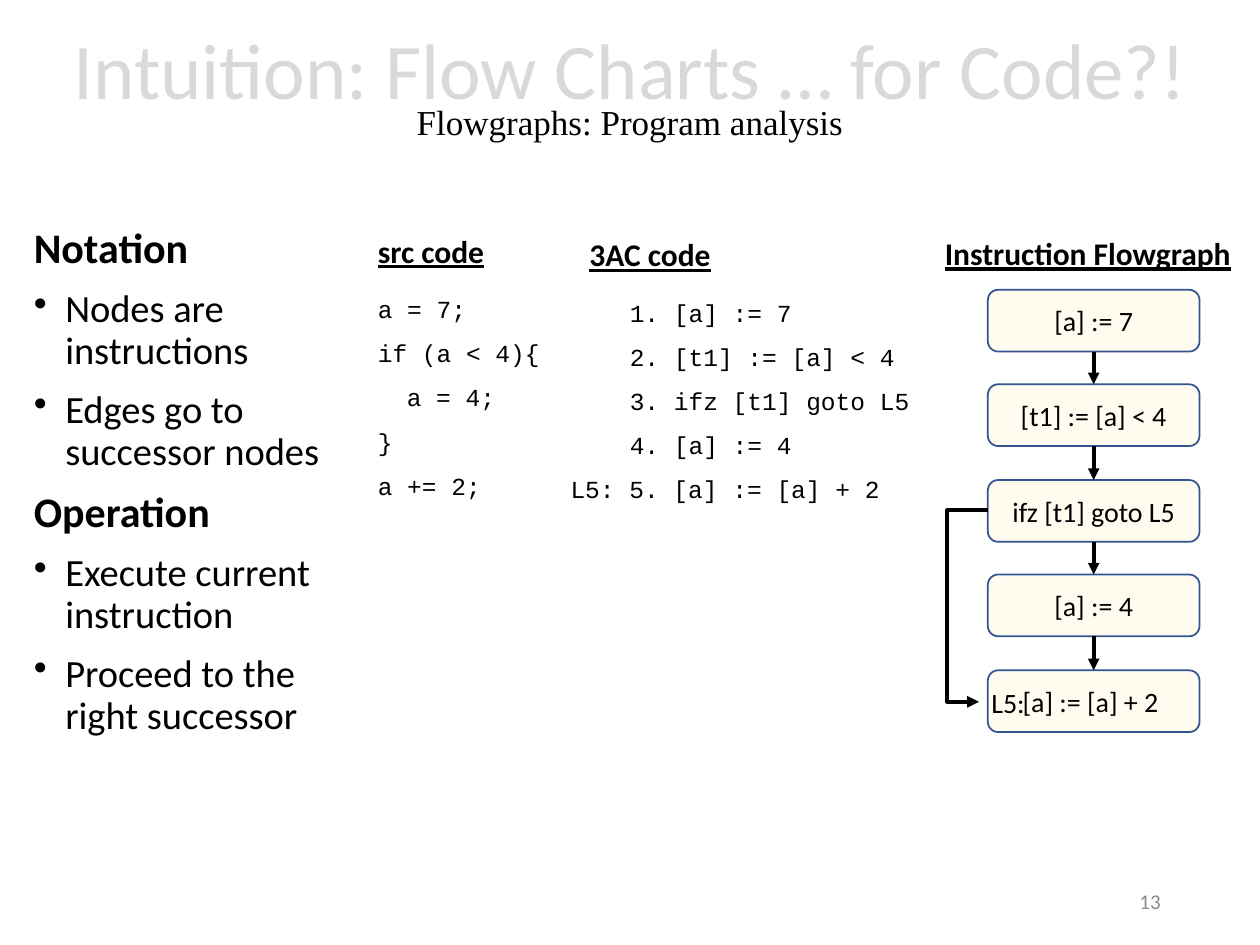
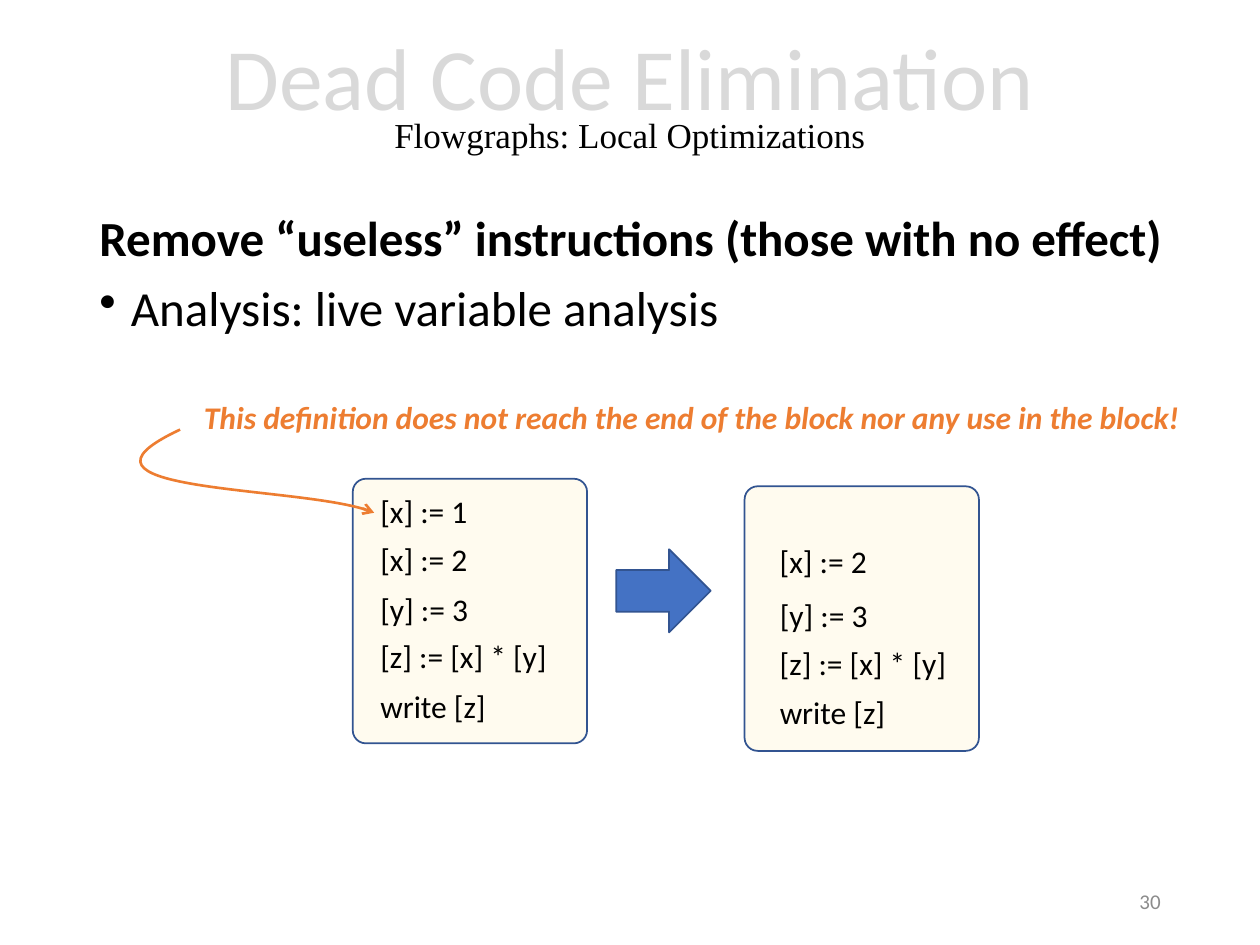
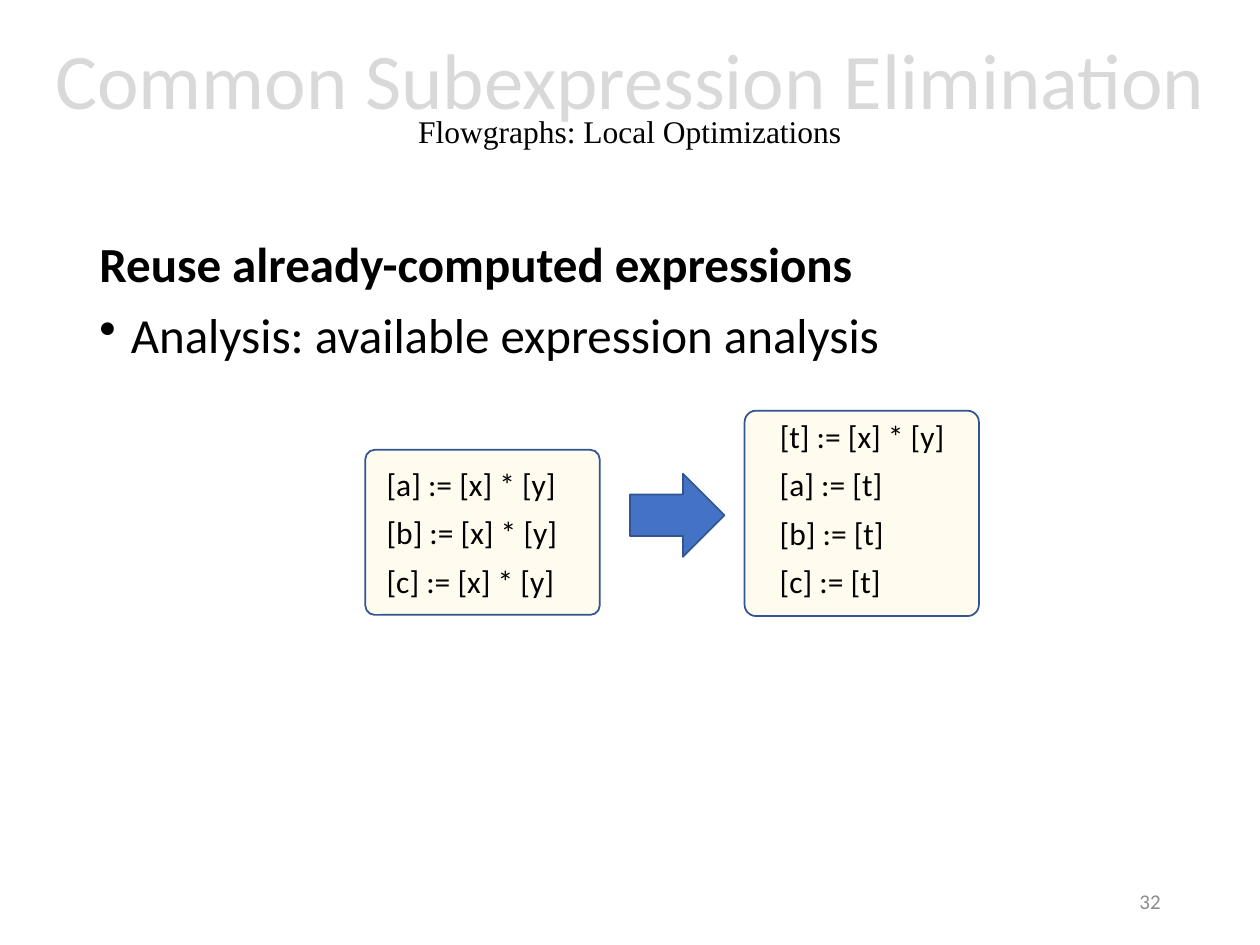
from dataclasses import dataclass, replace
from typing import NamedTuple, Sequence

from lxml.etree import SubElement
from pptx import Presentation
from pptx.dml.color import RGBColor
from pptx.enum.shapes import MSO_CONNECTOR, MSO_SHAPE
from pptx.enum.text import MSO_ANCHOR, MSO_AUTO_SIZE, PP_ALIGN
from pptx.oxml.ns import qn
from pptx.util import Pt

PX = 9144  # EMU per px, 100 px to the inch
SLIDE_WIDTH, SLIDE_HEIGHT = 1000, 750

BLACK = RGBColor(0x00, 0x00, 0x00)
TITLE_GRAY = RGBColor(0xD9, 0xD9, 0xD9)
NUMBER_GRAY = RGBColor(0x8C, 0x8C, 0x8C)
CREAM = RGBColor(0xFF, 0xF2, 0xCC)
BLUE = RGBColor(0x44, 0x72, 0xC4)
DARK_BLUE = RGBColor(0x32, 0x54, 0x91)
ORANGE = RGBColor(0xED, 0x7D, 0x31)

BLOCK_WIDTH = 186
BULLET_INDENT = 25
CODE_CHARACTER = 11.67  # px advance of one character of 14 pt Courier New


class Box(NamedTuple):
    left: int
    top: int
    width: int
    height: int

    def emu(self) -> list[int]:
        return [value * PX for value in self]


class Statement(NamedTuple):
    text: str
    width: int


class CodeLine(NamedTuple):
    text: str
    indent: int = 0  # in characters


class BodyLine(NamedTuple):
    text: str
    bullet: bool = True


@dataclass(frozen=True)
class TextStyle:
    size: int
    font: str = "Calibri"
    color: RGBColor = BLACK
    bold: bool = False
    italic: bool = False
    underline: bool = False


NODE_TEXT = TextStyle(16)
STATEMENT_TEXT = TextStyle(18)
HEADING_TEXT = TextStyle(18, bold=True, underline=True)
CODE_TEXT = TextStyle(14, font="Courier New")
CALLOUT_TEXT = TextStyle(18, color=ORANGE, bold=True, italic=True)
NUMBER_TEXT = TextStyle(12, color=NUMBER_GRAY)

ASSIGN_Y = Statement("[y] := 3", 91)
ASSIGN_Z = Statement("[z] := [x] * [y]", 154)
WRITE_Z = Statement("write [z]", 105)
ASSIGN_X = Statement("[x] := 2", 90)


def add_run(paragraph, text: str, style: TextStyle):
    run = paragraph.add_run()
    run.text = text
    font = run.font
    font.name, font.size = style.font, Pt(style.size)
    font.bold, font.italic, font.underline = style.bold, style.italic, style.underline
    font.color.rgb = style.color
    return run


def add_text_frame(slide, box: Box, wrap: bool = True, anchor=MSO_ANCHOR.TOP):
    frame = slide.shapes.add_textbox(*box.emu()).text_frame
    frame.word_wrap = wrap
    frame.vertical_anchor = anchor
    if not wrap:
        frame.auto_size = MSO_AUTO_SIZE.SHAPE_TO_FIT_TEXT
    return frame


def add_paragraphs(frame, count: int) -> list:
    return [frame.paragraphs[0]] + [frame.add_paragraph() for _ in range(count - 1)]


def set_indent(paragraph, margin: int, first_line: int = 0):
    properties = paragraph._p.get_or_add_pPr()
    properties.set("marL", str(margin * PX))
    properties.set("indent", str(first_line * PX))
    return properties


def add_label(slide, box: Box, text: str, style: TextStyle) -> None:
    frame = add_text_frame(slide, box, wrap=False)
    add_run(frame.paragraphs[0], text, style)


def add_title(slide, top: int, title: str, size: int, subtitle: str, subtitle_size: int) -> None:
    frame = add_text_frame(slide, Box(0, top, SLIDE_WIDTH, 145), anchor=MSO_ANCHOR.MIDDLE)
    paragraph = frame.paragraphs[0]
    paragraph.alignment = PP_ALIGN.CENTER
    paragraph.line_spacing = 0.7
    run = add_run(paragraph, title, TextStyle(size, color=TITLE_GRAY))
    outline = run.font._element.makeelement(qn("a:ln"), {"w": str(Pt(1))})
    fill = SubElement(outline, qn("a:solidFill"))
    SubElement(fill, qn("a:srgbClr"), val=str(BLACK))
    run.font._element.insert(0, outline)
    paragraph.add_line_break()
    add_run(paragraph, subtitle, TextStyle(subtitle_size, font="Times New Roman"))


def add_slide_number(slide, number: int) -> None:
    frame = add_text_frame(slide, Box(706, 695, 225, 40), anchor=MSO_ANCHOR.MIDDLE)
    paragraph = frame.paragraphs[0]
    paragraph.alignment = PP_ALIGN.RIGHT
    add_run(paragraph, str(number), NUMBER_TEXT)


def add_body(slide, box: Box, lines: Sequence[BodyLine], heading_size: int, bullet_size: int) -> None:
    frame = add_text_frame(slide, box)
    for paragraph, line in zip(add_paragraphs(frame, len(lines)), lines):
        paragraph.line_spacing = 0.9
        paragraph.space_before = Pt(10)
        if line.bullet:
            properties = set_indent(paragraph, BULLET_INDENT, -BULLET_INDENT)
            SubElement(properties, qn("a:buChar"), char="•")
        size = bullet_size if line.bullet else heading_size
        add_run(paragraph, line.text, TextStyle(size, bold=not line.bullet))


def add_code(slide, box: Box, lines: Sequence[CodeLine]) -> None:
    frame = add_text_frame(slide, box, wrap=False)
    for paragraph, line in zip(add_paragraphs(frame, len(lines)), lines):
        paragraph.line_spacing = 1.5
        if line.indent:
            set_indent(paragraph, round(line.indent * CODE_CHARACTER))
        add_run(paragraph, line.text, CODE_TEXT)


def add_filled_shape(slide, kind, box: Box, color: RGBColor):
    shape = slide.shapes.add_shape(kind, *box.emu())
    shape.shadow.inherit = False
    shape.fill.solid()
    shape.fill.fore_color.rgb = color
    shape.line.color.rgb = DARK_BLUE
    shape.line.width = Pt(1)
    return shape


def add_cream_box(slide, box: Box):
    shape = add_filled_shape(slide, MSO_SHAPE.ROUNDED_RECTANGLE, box, CREAM)
    color = shape._element.spPr.find(qn("a:solidFill")).find(qn("a:srgbClr"))
    SubElement(color, qn("a:alpha"), val="30000")
    return shape


def add_node(slide, box: Box, text: str):
    node = add_cream_box(slide, box)
    node.text_frame.vertical_anchor = MSO_ANCHOR.MIDDLE
    paragraph = node.text_frame.paragraphs[0]
    paragraph.alignment = PP_ALIGN.CENTER
    add_run(paragraph, text, NODE_TEXT)
    return node


def add_block(slide, left: int, top: int, height: int) -> None:
    block = add_cream_box(slide, Box(left, top, BLOCK_WIDTH, height))
    block.adjustments[0] = 0.056


def add_statements(slide, left: int, top: int, statements: Sequence[Statement]) -> None:
    for index, statement in enumerate(statements):
        box = Box(left, top + index * 77 // 2, statement.width, 40)
        add_label(slide, box, statement.text, STATEMENT_TEXT)


def add_transform_arrow(slide, left: int, top: int) -> None:
    add_filled_shape(slide, MSO_SHAPE.RIGHT_ARROW, Box(left, top, 75, 66), BLUE)


def set_arrow_line(shape, color: RGBColor, width: float, head: str) -> None:
    shape.line.color.rgb = color
    shape.line.width = Pt(width)
    SubElement(shape.line._get_or_add_ln(), qn("a:tailEnd"), type=head)


def add_edge(slide, kind, begin: tuple[int, int], end: tuple[int, int]):
    edge = slide.shapes.add_connector(kind, *(value * PX for value in begin + end))
    set_arrow_line(edge, BLACK, 2.25, "triangle")
    SubElement(edge._element.spPr, qn("a:effectLst"))
    return edge


def add_jump_edge(slide, begin: tuple[int, int], end: tuple[int, int], turn_x: int) -> None:
    """Draw an elbow that leaves leftwards to turn_x and comes back to end."""
    edge = add_edge(slide, MSO_CONNECTOR.ELBOW, begin, end)
    bend = round(100000 * (begin[0] - turn_x) / (begin[0] - end[0]))
    geometry = edge._element.spPr.find(qn("a:prstGeom"))
    adjustments = geometry.find(qn("a:avLst"))
    if adjustments is None:
        adjustments = SubElement(geometry, qn("a:avLst"))
    SubElement(adjustments, qn("a:gd"), name="adj1", fmla=f"val {bend}")


def add_callout_curve(slide) -> None:
    """Draw one cubic curve; the outline through its leftmost point sets its frame."""
    start, leftmost, end = (143, 341), (113, 366), (297, 407)
    controls = [(36, 391), (246, 385)]
    builder = slide.shapes.build_freeform(*start, scale=PX)
    builder.add_line_segments([leftmost, end], close=False)
    curve = builder.convert_to_shape()
    curve.shadow.inherit = False
    curve.fill.background()
    set_arrow_line(curve, ORANGE, 1.5, "arrow")
    outline = next(curve._element.iter(qn("a:moveTo"))).getparent()
    for segment in outline.findall(qn("a:lnTo")):
        outline.remove(segment)
    bezier = SubElement(outline, qn("a:cubicBezTo"))
    for x, y in controls + [end]:
        SubElement(bezier, qn("a:pt"), x=str(x - leftmost[0]), y=str(y - start[1]))


def add_flowgraph(slide) -> None:
    instructions = ["[a] := 7", "[t1] := [a] < 4", "ifz [t1] goto L5", "[a] := 4", "[a] := [a] + 2 "]
    nodes = [
        add_node(slide, Box(784, 230 + index * 151 // 2, 168, 49), text)
        for index, text in enumerate(instructions)
    ]
    for source, target in zip(nodes, nodes[1:]):
        edge = add_edge(slide, MSO_CONNECTOR.STRAIGHT, (868, 279), (868, 305))
        edge.begin_connect(source, 2)
        edge.end_connect(target, 0)
    add_jump_edge(slide, (784, 405), (777, 557), 752)
    add_label(slide, Box(777, 539, 47, 37), "L5:", NODE_TEXT)


def build_flowchart_slide(slide) -> None:
    add_title(slide, 2, "Intuition: Flow Charts … for Code?!", 45, "Flowgraphs: Program analysis", 20)
    add_slide_number(slide, 13)
    add_body(slide, Box(17, 175, 250, 495), [
        BodyLine("Notation", bullet=False),
        BodyLine("Nodes are instructions"),
        BodyLine("Edges go to successor nodes"),
        BodyLine("Operation", bullet=False),
        BodyLine("Execute current instruction"),
        BodyLine("Proceed to the right successor"),
    ], 24, 22)
    add_flowgraph(slide)
    add_code(slide, Box(290, 217, 149, 184), [
        CodeLine("a = 7;"),
        CodeLine("if (a < 4){"),
        CodeLine("a = 4;", 2),
        CodeLine("}"),
        CodeLine("a += 2;"),
    ])
    add_code(slide, Box(443, 220, 290, 184), [
        CodeLine("1. [a] := 7", 4),
        CodeLine("2. [t1] := [a] < 4", 4),
        CodeLine("3. ifz [t1] goto L5", 4),
        CodeLine("4. [a] := 4", 4),
        CodeLine("L5: 5. [a] := [a] + 2"),
    ])
    add_label(slide, Box(290, 179, 105, 40), "src code", HEADING_TEXT)
    add_label(slide, Box(458, 182, 117, 40), "3AC code", HEADING_TEXT)
    add_label(slide, Box(740, 181, 249, 40), "Instruction Flowgraph", HEADING_TEXT)


def build_dead_code_slide(slide) -> None:
    add_block(slide, 591, 386, 210)
    add_block(slide, 280, 380, 210)
    add_title(slide, 9, "Dead Code Elimination", 50, "Flowgraphs: Local Optimizations", 20)
    add_slide_number(slide, 30)
    add_statements(slide, 292, 386, [Statement("[x] := 1", 90), ASSIGN_X, ASSIGN_Y, ASSIGN_Z, WRITE_Z])
    add_statements(slide, 609, 425, [ASSIGN_X])
    add_statements(slide, 609, 468, [ASSIGN_Y, ASSIGN_Z, WRITE_Z])
    add_transform_arrow(slide, 489, 436)
    add_callout_curve(slide)
    add_label(
        slide, Box(152, 311, 804, 40),
        "This definition does not reach the end of the block nor any use in the block!", CALLOUT_TEXT,
    )
    add_body(slide, Box(69, 165, 879, 476), [
        BodyLine("Remove “useless” instructions (those with no effect)", bullet=False),
        BodyLine("Analysis: live variable analysis"),
    ], 28, 28)


def build_subexpression_slide(slide) -> None:
    add_block(slide, 591, 326, 163)
    add_block(slide, 290, 357, 131)
    add_title(slide, 9, "Common Subexpression Elimination", 45, "Flowgraphs: Local Optimizations", 18)
    add_body(slide, Box(69, 186, 844, 125), [
        BodyLine("Reuse already-computed expressions", bullet=False),
        BodyLine("Analysis: available expression analysis"),
    ], 28, 28)
    add_slide_number(slide, 32)
    add_statements(slide, 297, 364, [Statement(f"[{name}] := [x] * [y]", 156) for name in "abc"])
    add_statements(slide, 609, 326, [
        Statement("[t] := [x] * [y]", 152),
        *(Statement(f"[{name}] := [t]", 103) for name in "abc"),
    ])
    add_transform_arrow(slide, 500, 376)


def main() -> None:
    presentation = Presentation()
    presentation.slide_width = SLIDE_WIDTH * PX
    presentation.slide_height = SLIDE_HEIGHT * PX
    blank_layout = presentation.slide_layouts[6]
    for build in (build_flowchart_slide, build_dead_code_slide, build_subexpression_slide):
        build(presentation.slides.add_slide(blank_layout))
    presentation.save("out.pptx")


if __name__ == "__main__":
    main()
